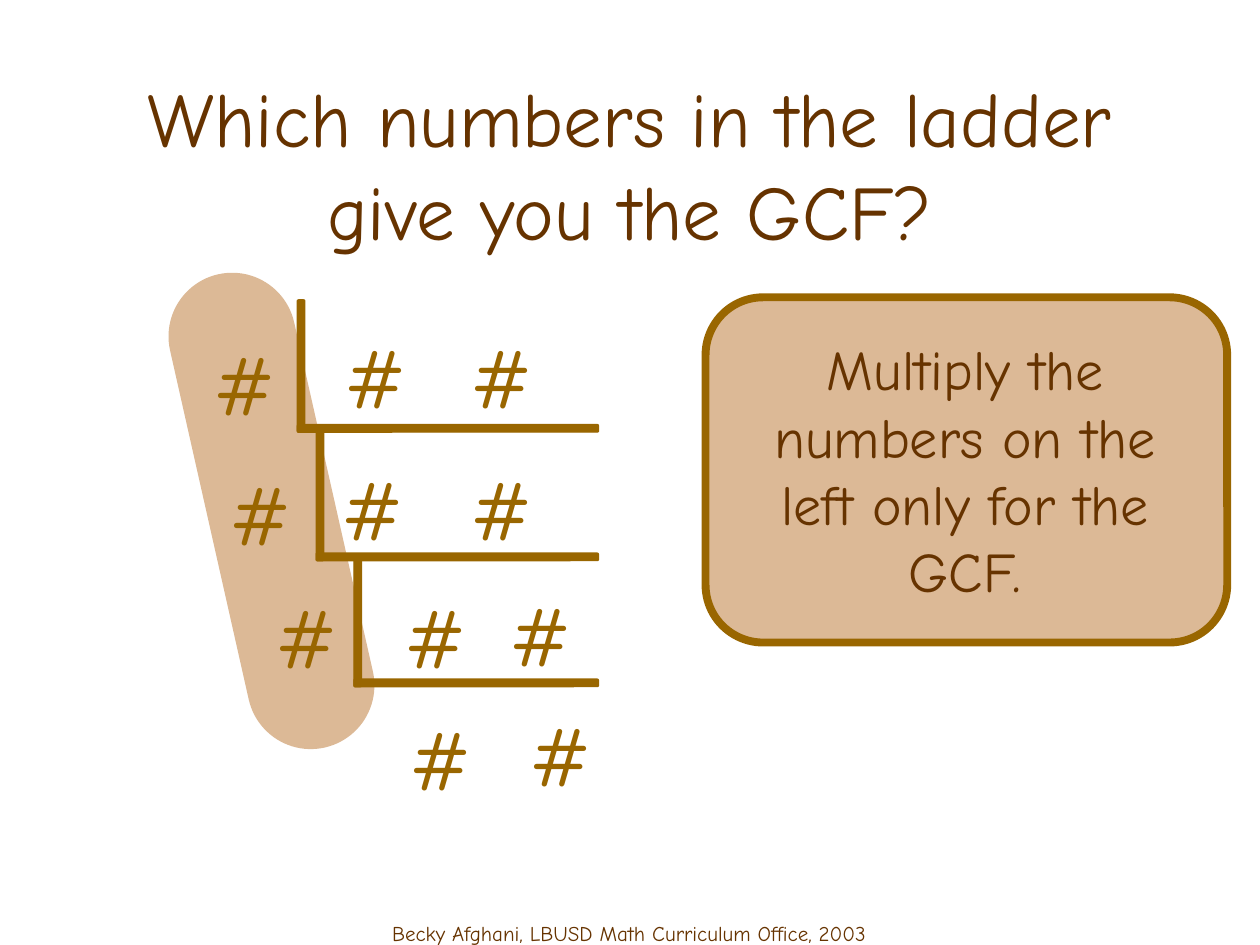
import pptx
import pptx.util
import pptx.dml.color
import pptx.enum.shapes
import pptx.enum.text

RGB = pptx.dml.color.RGBColor
SHAPE = pptx.enum.shapes.MSO_SHAPE
ANCHOR = pptx.enum.text.MSO_ANCHOR

BROWN = RGB(0x66, 0x33, 0x00)
GOLD = RGB(0x99, 0x66, 0x00)
TAN = RGB(0xDC, 0xB9, 0x96)

COLS, ROWS = 100, 75
THICK = 0.6                     # width of a ladder bar
END = 47.5                      # column where every rung stops

# Post column, top row, and the numbers (centre, top) beside it
STEPS = [
    (23.6, 23.8, [(19.4, 25.8), (29.8, 25.3), (39.8, 25.3)]),
    (25.1, 34.0, [(20.7, 36.1), (29.6, 35.7), (39.8, 35.7)]),
    (28.1, 44.0, [(24.3, 45.9), (34.6, 45.9), (42.9, 45.7)]),
]
LAST = [(35, 55.6), (44.5, 55.3)]


class Deck:
    """Style, grid and current slide."""

    face = "Comic Neue"

    def __init__(self):
        self.file = pptx.Presentation()
        self.file.slide_width = pptx.util.Inches(10)
        self.file.slide_height = pptx.util.Inches(7.5)
        self.slide = self.file.slides.add_slide(self.file.slide_layouts[5])

    def grid(self, left, top, wide, high):
        x = self.file.slide_width / COLS
        y = self.file.slide_height / ROWS
        return [round(n) for n in (left * x, top * y, wide * x, high * y)]

    def label(self, shape, text, size, color=BROWN, wrap=True, anchor=ANCHOR.TOP):
        """Put centred text into a shape."""
        frame = shape.text_frame
        form = {"word_wrap": wrap, "vertical_anchor": anchor,
                "auto_size": pptx.enum.text.MSO_AUTO_SIZE.NONE}
        for name, value in form.items():
            setattr(frame, name, value)
        line = frame.paragraphs[0]
        line.alignment = pptx.enum.text.PP_ALIGN.CENTER
        run = line.add_run()
        run.text = text
        for name, value in {"name": self.face, "size": pptx.util.Pt(size)}.items():
            setattr(run.font, name, value)
        run.font.color.rgb = color

    def title(self, text, area):
        shape = self.slide.shapes.title
        names = ("left", "top", "width", "height")
        for name, value in zip(names, self.grid(*area)):
            setattr(shape, name, value)
        self.label(shape, text, 44, anchor=ANCHOR.MIDDLE)

    def text(self, text, area, size, home=None, **form):
        shapes = (home or self.slide).shapes
        self.label(shapes.add_textbox(*self.grid(*area)), text, size, **form)

    def block(self, area, fill, line=None, width=0.75, bend=0.167, turn=0, home=None):
        """Add a rounded rectangle."""
        shapes = (home or self.slide).shapes
        shape = shapes.add_shape(SHAPE.ROUNDED_RECTANGLE, *self.grid(*area))
        shape.shadow.inherit = False
        shape.adjustments[0] = bend
        shape.rotation = turn
        shape.fill.solid()
        shape.fill.fore_color.rgb = fill
        if line is None:
            shape.line.fill.background()
        else:
            shape.line.color.rgb = line
            shape.line.width = pptx.util.Pt(width)

    def step(self, left, top):
        """Add a post and the rung at its foot."""
        self.block((left, top, THICK, 10.5), GOLD, GOLD)
        self.block((left, top + 9.9, END - left, THICK), GOLD, GOLD)

    def marks(self, spots):
        for mid, top in spots:
            self.text("#", (mid - 3, top, 6, 6.8), 48, color=GOLD, wrap=False)

    def note(self, text):
        group = self.slide.shapes.add_group_shape()
        self.block((56, 23.6, 41.4, 27.4), TAN, GOLD, 4.5, home=group)
        self.text(text, (59.1, 26.1, 35, 22.3), 32, home=group)


def main():
    deck = Deck()
    deck.text("Becky Afghani, LBUSD Math Curriculum Office, 2003",
              (7.8, 72.6, 84.3, 5), 12)
    deck.block((16.5, 21.3, 10.1, 38.5), TAN, bend=0.5, turn=-12.7)
    deck.title("Which numbers in the ladder give you the GCF?",
               (7.5, 6.7, 85, 12.5))
    for left, top, spots in STEPS:
        deck.step(left, top)
        deck.marks(spots)
    deck.marks(LAST)
    deck.note("Multiply the numbers on the left only for the GCF.")
    deck.file.save("out.pptx")


if __name__ == "__main__":
    main()
